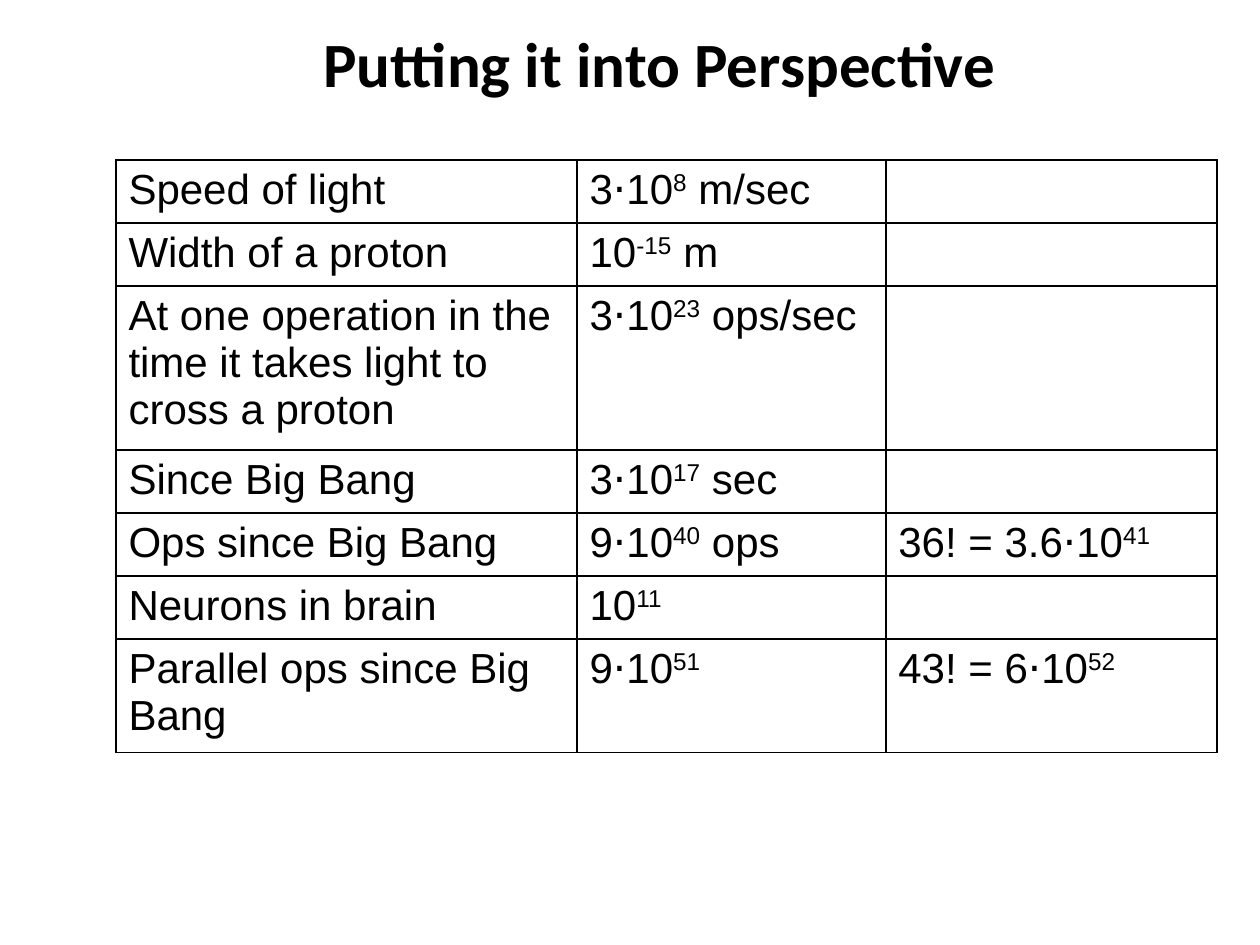
"""Build a slide that puts large numbers into perspective in a table."""
from lxml.etree import SubElement
from pptx import Presentation
from pptx.dml.color import RGBColor
from pptx.enum.text import MSO_ANCHOR as Anchor, PP_ALIGN as Align
from pptx.oxml.ns import qn
from pptx.util import Inches, Pt

TITLE = "Putting it into Perspective "
ROWS = [
    (0.5, "Speed of light", "3⋅10^8^ m/sec", ""),
    (0.5, "Width of a proton", "10^-15^ m", ""),
    (1.3, "At one operation in the time it takes light to cross a proton", "3⋅10^23^ ops/sec", ""),
    (0.5, "Since Big Bang", "3⋅10^17^ sec", ""),
    (0.5, "Ops since Big Bang", "9⋅10^40^ ops", "36! = 3.6⋅10^41^"),
    (0.5, "Neurons in brain", "10^11^", ""),
    (0.9, "Parallel ops since Big Bang", "9⋅10^51^", "43! = 6⋅10^52^"),
]
COL_WIDTHS = [3.66, 2.45, 2.63]
BLACK = "000000"


def rgb(color):
    """Turn a hex string into a colour."""
    return RGBColor.from_string(color)


def write(tf, text, size=24, font="Arial", color=BLACK, bold=False, align=Align.LEFT):
    """Write one paragraph, with text between carets as superscript."""
    p = tf.paragraphs[0]
    p.alignment = align
    for i, part in enumerate(text.split("^")):
        if not part:
            continue
        r = p.add_run()
        r.text = part
        r.font.size, r.font.name, r.font.bold = Pt(size), font, bold
        r.font.color.rgb = rgb(color)
        if i % 2:
            r._r.get_or_add_rPr().set("baseline", "30000")


def set_borders(cell, color=BLACK, width=1):
    """Draw a solid line on all four sides of a cell."""
    tc_pr = cell._tc.get_or_add_tcPr()
    for side in ("lnL", "lnR", "lnT", "lnB"):
        ln = SubElement(tc_pr, qn(f"a:{side}"), w=str(Pt(width)))
        fill = SubElement(ln, qn("a:solidFill"))
        SubElement(fill, qn("a:srgbClr"), val=color)


def add_title(s):
    """Add the slide title."""
    tf = s.shapes.add_textbox(Inches(0.58), Inches(0.08), Inches(9.42), Inches(0.83)).text_frame
    tf.word_wrap = True
    tf.vertical_anchor = Anchor.MIDDLE
    write(tf, TITLE, size=36, font="Calibri", bold=True, align=Align.CENTER)


def add_numbers_table(s):
    """Add the table of quantities."""
    width, height = sum(COL_WIDTHS), sum(row[0] for row in ROWS)
    table = s.shapes.add_table(len(ROWS), len(COL_WIDTHS), Inches(0.92), Inches(1.27),
                               Inches(width), Inches(height)).table
    table.first_row = table.horz_banding = False
    for col, col_width in zip(table.columns, COL_WIDTHS):
        col.width = Inches(col_width)
    for row, (row_height, *texts) in zip(table.rows, ROWS):
        row.height = Inches(row_height)
        for cell, text in zip(row.cells, texts):
            set_borders(cell)
            cell.fill.background()
            write(cell.text_frame, text)


def main():
    """Create and save the presentation."""
    prs = Presentation()
    prs.slide_width, prs.slide_height = Inches(10), Inches(7.5)
    s = prs.slides.add_slide(prs.slide_layouts[6])
    add_title(s)
    add_numbers_table(s)
    prs.save("out.pptx")


if __name__ == "__main__":
    main()
